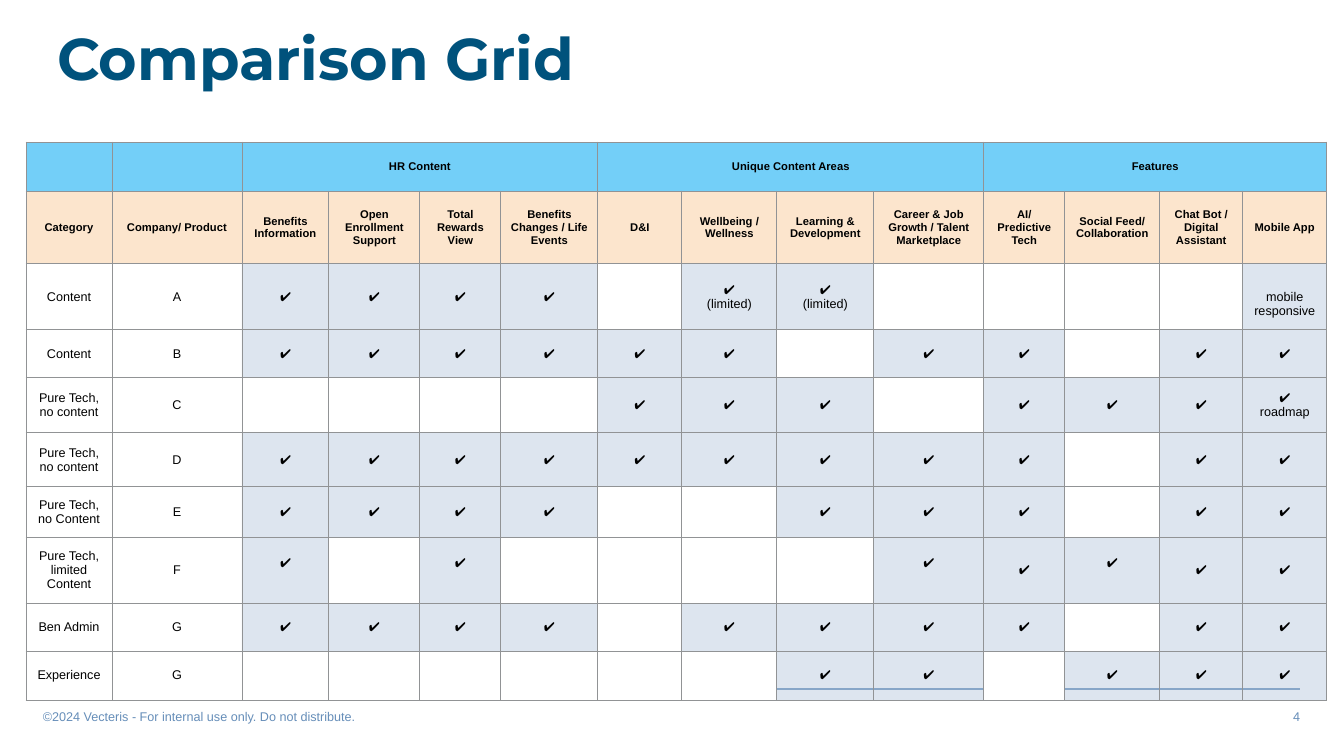
"""Build the comparison grid slide: products against content areas and features."""
from lxml import etree
from pptx import Presentation
from pptx.dml.color import RGBColor
from pptx.enum.shapes import MSO_CONNECTOR
from pptx.enum.text import MSO_ANCHOR, MSO_AUTO_SIZE, PP_ALIGN
from pptx.oxml.ns import qn
from pptx.util import Pt

STRAIGHT = MSO_CONNECTOR.STRAIGHT
TOP, MIDDLE = MSO_ANCHOR.TOP, MSO_ANCHOR.MIDDLE
LEFT, CENTER, RIGHT = PP_ALIGN.LEFT, PP_ALIGN.CENTER, PP_ALIGN.RIGHT
NO_AUTOFIT = MSO_AUTO_SIZE.NONE

NAVY = RGBColor(0x00, 0x52, 0x7C)
STEEL = RGBColor(0x66, 0x8E, 0xB9)
SKY = RGBColor(0x73, 0xCF, 0xF8)
PEACH = RGBColor(0xFC, 0xE5, 0xCD)
MIST = RGBColor(0xB3, 0xC6, 0xDC)
WHITE = RGBColor(0xFF, 0xFF, 0xFF)
BLACK = RGBColor(0x00, 0x00, 0x00)
GRAY = RGBColor(0x91, 0x93, 0x95)

SLIDE_W, SLIDE_H = 1344, 756
COLUMN_WIDTHS = [86, 130, 87, 91, 81, 97, 84, 95, 97, 110, 81, 95, 83, 84]
ROW_HEIGHTS = [49, 73, 66, 48, 55, 54, 50, 66, 48, 49]
GROUPS = {2: "HR Content", 6: "Unique Content Areas", 10: "Features"}
GROUP_SPAN = 4
HEADINGS = [
    "Category", "Company/ Product", "Benefits Information",
    "Open Enrollment Support", "Total Rewards View",
    "Benefits Changes / Life Events", "D&I", "Wellbeing / Wellness",
    "Learning & Development", "Career & Job Growth / Talent Marketplace",
    "AI/ Predictive Tech", "Social Feed/ Collaboration",
    "Chat Bot / Digital Assistant", "Mobile App",
]
PRODUCTS = [
    ("Content", "A", "xxxx.ll....m"),
    ("Content", "B", "xxxxxx.xx.xx"),
    ("Pure Tech, no content", "C", "....xxx.xxxr"),
    ("Pure Tech, no content", "D", "xxxxxxxxx.xx"),
    ("Pure Tech, no Content", "E", "xxxx..xxx.xx"),
    ("Pure Tech, limited Content", "F", "u.u....uxuxx"),
    ("Ben Admin", "G", "xxxx.xxxx.xx"),
    ("Experience", "G", "......xx.xxx"),
]
MARKS = {
    ".": "", "x": "✔", "u": "✔", "l": "✔\n(limited)",
    "r": "✔\nroadmap", "m": "mobile responsive",
}
CELL_MARGIN, LINE_SHIFT = 10, 14


def px(length):
    return round(length * 12192000 / SLIDE_W)


def add_run(paragraph, text, font, size, color, bold=False):
    run = paragraph.add_run()
    run.text = text
    run.font.name = font
    run.font.size = Pt(size)
    run.font.bold = bold
    run.font.color.rgb = color


prs = Presentation()
prs.slide_width, prs.slide_height = px(SLIDE_W), px(SLIDE_H)
slide = prs.slides.add_slide(prs.slide_layouts[5])

title = slide.shapes.title
title.left, title.top, title.width, title.height = px(47), px(25), px(763), px(150)
title_frame = title.text_frame
title_frame.auto_size = NO_AUTOFIT
title_frame.vertical_anchor = TOP
title_line = title_frame.paragraphs[0]
title_line.alignment = LEFT
title_line.line_spacing = 0.9
add_run(title_line, "Comparison Grid", "Montserrat", 42, NAVY, True)

footer_rule = slide.shapes.add_connector(STRAIGHT, px(44), px(689), px(1300), px(689))
footer_rule.line.color.rgb = STEEL
footer_rule.line.width = Pt(1)
etree.SubElement(footer_rule._element.spPr, qn("a:effectLst"))

for left, alignment, text in [
    (33, LEFT, "©2024 Vecteris - For internal use only. Do not distribute."),
    (773, RIGHT, "4"),
]:
    footer = slide.shapes.add_textbox(px(left), px(704), px(537), px(25))
    footer.text_frame.word_wrap = True
    footer.text_frame.paragraphs[0].alignment = alignment
    add_run(footer.text_frame.paragraphs[0], text, "Arial", 9, STEEL)

grid = slide.shapes.add_table(
    len(ROW_HEIGHTS), len(COLUMN_WIDTHS), px(26), px(142),
    px(sum(COLUMN_WIDTHS)), px(sum(ROW_HEIGHTS))).table
grid.first_row = grid.horz_banding = False
for column, width in zip(grid.columns, COLUMN_WIDTHS):
    column.width = px(width)
for row, height in zip(grid.rows, ROW_HEIGHTS):
    row.height = px(height)
for start in GROUPS:
    grid.cell(0, start).merge(grid.cell(0, start + GROUP_SPAN - 1))

group_row = [GROUPS.get(index, "") for index in range(len(COLUMN_WIDTHS))]
product_rows = [[category, product, *marks] for category, product, marks in PRODUCTS]

for row_index, entries in enumerate([group_row, HEADINGS, *product_rows]):
    is_heading = row_index < 2
    for column_index, entry in enumerate(entries):
        cell = grid.cell(row_index, column_index)
        is_mark = not is_heading and column_index >= 2
        text = MARKS[entry] if is_mark else entry

        cell.vertical_anchor = MIDDLE
        cell.margin_left = cell.margin_right = px(CELL_MARGIN)
        cell.margin_top = px(CELL_MARGIN + LINE_SHIFT * (is_mark and entry == "m"))
        cell.margin_bottom = px(CELL_MARGIN + LINE_SHIFT * (is_mark and entry == "u"))

        properties = cell._tc.get_or_add_tcPr()
        for side in ("a:lnL", "a:lnR", "a:lnT", "a:lnB"):
            border = etree.SubElement(properties, qn(side), w=str(Pt(0.75)))
            border_fill = etree.SubElement(border, qn("a:solidFill"))
            etree.SubElement(border_fill, qn("a:srgbClr"), val=str(GRAY))

        cell.fill.solid()
        if is_heading:
            cell.fill.fore_color.rgb = (SKY, PEACH)[row_index]
        elif is_mark and text:
            cell.fill.fore_color.rgb = MIST
            tint = properties.find(qn("a:solidFill")).find(qn("a:srgbClr"))
            etree.SubElement(tint, qn("a:alpha"), val="44000")
        else:
            cell.fill.fore_color.rgb = WHITE

        for line_index, line in enumerate(text.split("\n")):
            frame = cell.text_frame
            paragraph = frame.add_paragraph() if line_index else frame.paragraphs[0]
            paragraph.alignment = CENTER
            if line:
                add_run(paragraph, line, "Arial", 8 if is_heading else 9, BLACK, is_heading)
            else:
                etree.SubElement(paragraph._p, qn("a:endParaRPr"), sz="900")

prs.save("out.pptx")
